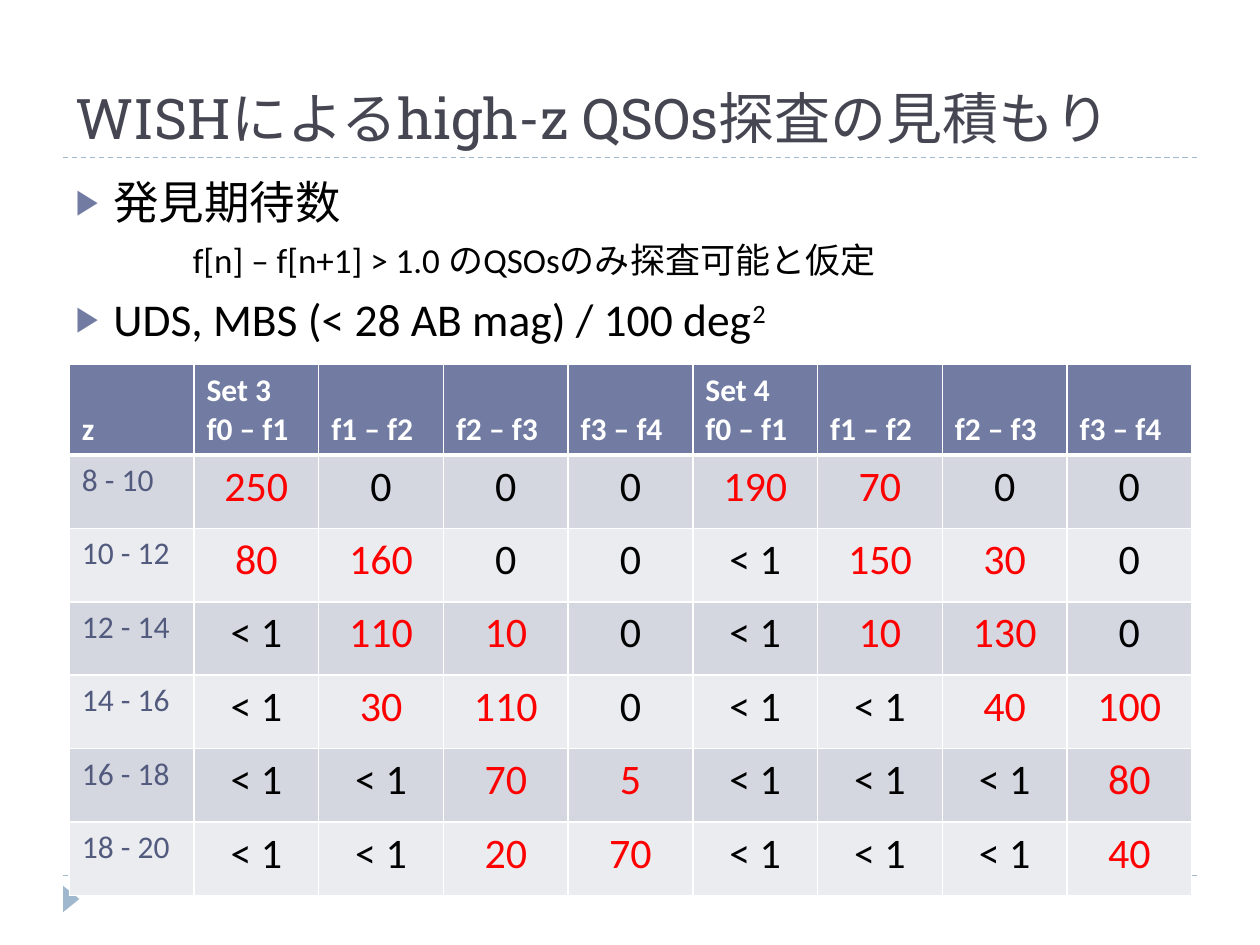
from pptx import Presentation
from pptx.dml.color import RGBColor as Rgb
from pptx.enum.dml import MSO_LINE as Dash
from pptx.enum.shapes import MSO_CONNECTOR as Conn, MSO_SHAPE as Kind
from pptx.enum.text import MSO_ANCHOR as Anchor, MSO_AUTO_SIZE as Fit, PP_ALIGN as Align
from pptx.oxml.ns import qn
from pptx.util import Inches, Pt
from lxml.etree import SubElement as Sub

COLS, ROWS = 100, 75
WIDE, HIGH = Inches(10), Inches(7.5)
HUES = {
    "title": "464653", "text": "000000", "head": "727CA3", "rule": "9FB8CD",
    "white": "FFFFFF", "key": "525B7E", "hit": "FF0000",
    "odd": "D5D7E0", "even": "EBECF0",
}
HEADS = ["z", "Set 3\nf0 – f1", "f1 – f2", "f2 – f3", "f3 – f4",
         "Set 4\nf0 – f1", "f1 – f2", "f2 – f3", "f3 – f4"]
COUNTS = [
    ["8 - 10", "250", "0", "0", "0", "190", "70", "0", "0"],
    ["10 - 12", "80", "160", "0", "0", "< 1", "150", "30", "0"],
    ["12 - 14", "< 1", "110", "10", "0", "< 1", "10", "130", "0"],
    ["14 - 16", "< 1", "30", "110", "0", "< 1", "< 1", "40", "100"],
    ["16 - 18", "< 1", "< 1", "70", "5", "< 1", "< 1", "< 1", "80"],
    ["18 - 20", "< 1", "< 1", "20", "70", "< 1", "< 1", "< 1", "40"],
]


def hue(name):
    return Rgb.from_string(HUES[name])


def grid(col, row, wide, high):
    return (int(WIDE * col / COLS), int(HIGH * row / ROWS),
            int(WIDE * wide / COLS), int(HIGH * high / ROWS))


def place(shape, box):
    shape.left, shape.top, shape.width, shape.height = box


def write(par, text, size=18, color="text", font="Calibri", bold=False,
          align=Align.LEFT, base=0):
    par.alignment = align
    run = par.add_run()
    run.text = text
    run.font.size = Pt(size)
    run.font.name = font
    run.font.bold = bold
    run.font.color.rgb = hue(color)
    if base:
        run._r.get_or_add_rPr().set("baseline", str(base * 1000))


def indent(par, left, first, mark=None):
    prop = par._p.get_or_add_pPr()
    prop.set("marL", str(Inches(left)))
    prop.set("indent", str(Inches(first)))
    if not mark:
        Sub(prop, qn("a:buNone"))
        return
    Sub(Sub(prop, qn("a:buClr")), qn("a:srgbClr"), val=HUES["head"])
    Sub(prop, qn("a:buSzPct"), val="76000")
    Sub(prop, qn("a:buFont"), typeface="Arial")
    Sub(prop, qn("a:buChar"), char=mark)


def add_rule(slide, box):
    left, top, wide, _ = box
    rule = slide.shapes.add_connector(Conn.STRAIGHT, left, top, left + wide, top)
    rule.line.color.rgb = hue("rule")
    rule.line.width = Pt(0.75)
    rule.line.dash_style = Dash.DASH
    Sub(rule._element.spPr, qn("a:effectLst"))


def add_mark(slide, box):
    mark = slide.shapes.add_shape(Kind.ISOSCELES_TRIANGLE, *box)
    mark.rotation = 90
    mark.shadow.inherit = False
    mark.fill.solid()
    mark.fill.fore_color.rgb = hue("rule")
    mark.line.fill.background()


def add_title(slide, box):
    title = slide.shapes.title
    place(title, box)
    frame = title.text_frame
    frame.word_wrap = True
    frame.auto_size = Fit.NONE
    frame.vertical_anchor = Anchor.BOTTOM
    write(frame.paragraphs[0], "WISHによるhigh-z QSOs探査の見積もり",
          size=32, color="title", font="Roboto Slab")


def add_list(slide, box):
    body = slide.placeholders[1]
    place(body, box)
    frame = body.text_frame
    frame.word_wrap = True
    frame.auto_size = Fit.NONE
    first, note, last = frame.paragraphs[0], frame.add_paragraph(), frame.add_paragraph()
    for par in (first, note, last):
        par.space_before = Pt(6)
    for par in (first, last):
        indent(par, 0.3, -0.3, "▶")
    indent(note, 0.93, 0)
    write(first, "発見期待数", size=26)
    write(note, "f[n] – f[n+1] > 1.0 のQSOsのみ探査可能と仮定", size=20)
    write(last, "UDS, MBS (< 28 AB mag) / 100 deg", size=26)
    write(last, "2", size=26, base=30)


def edge(cell, low):
    prop = cell._tc.get_or_add_tcPr()
    for side, size in (("L", 1), ("R", 1), ("T", 1), ("B", low)):
        line = Sub(prop, qn("a:ln" + side), w=str(Pt(size)))
        Sub(Sub(line, qn("a:solidFill")), qn("a:srgbClr"), val=HUES["white"])


def fill_cell(cell, text, fill, low=1, **form):
    edge(cell, low)
    cell.fill.solid()
    cell.fill.fore_color.rgb = hue(fill)
    frame = cell.text_frame
    for num, part in enumerate(text.split("\n")):
        par = frame.add_paragraph() if num else frame.paragraphs[0]
        write(par, part, **form)


def add_counts(slide, box, top):
    rows = len(COUNTS) + 1
    table = slide.shapes.add_table(rows, len(HEADS), *box).table
    for col in table.columns:
        col.width = box[2] // len(HEADS)
    for num, row in enumerate(table.rows):
        row.height = (box[3] - top) // len(COUNTS) if num else top
    for num, text in enumerate(HEADS):
        cell = table.cell(0, num)
        fill_cell(cell, text, "head", low=3, color="white", bold=True)
        cell.vertical_anchor = Anchor.BOTTOM
    for row, (key, *vals) in enumerate(COUNTS, 1):
        band = "odd" if row % 2 else "even"
        fill_cell(table.cell(row, 0), key, band, color="key")
        for col, val in enumerate(vals, 1):
            tone = "text" if val in ("0", "< 1") else "hit"
            fill_cell(table.cell(row, col), val, band, size=24, color=tone,
                      align=Align.CENTER)


def main():
    deck = Presentation()
    deck.slide_width, deck.slide_height = WIDE, HIGH
    slide = deck.slides.add_slide(deck.slide_layouts[1])
    for row in (69.5, 12.5):
        add_rule(slide, grid(5, row, 90, 0))
    add_mark(slide, grid(4.6, 70.7, 2.1, 1.3))
    add_title(slide, grid(5, 1.7, 90, 10.8))
    add_list(slide, grid(5, 13.3, 90, 54))
    add_counts(slide, grid(5.5, 28.9, 89.1, 42.2), Inches(0.72))
    deck.save("out.pptx")


if __name__ == "__main__":
    main()
